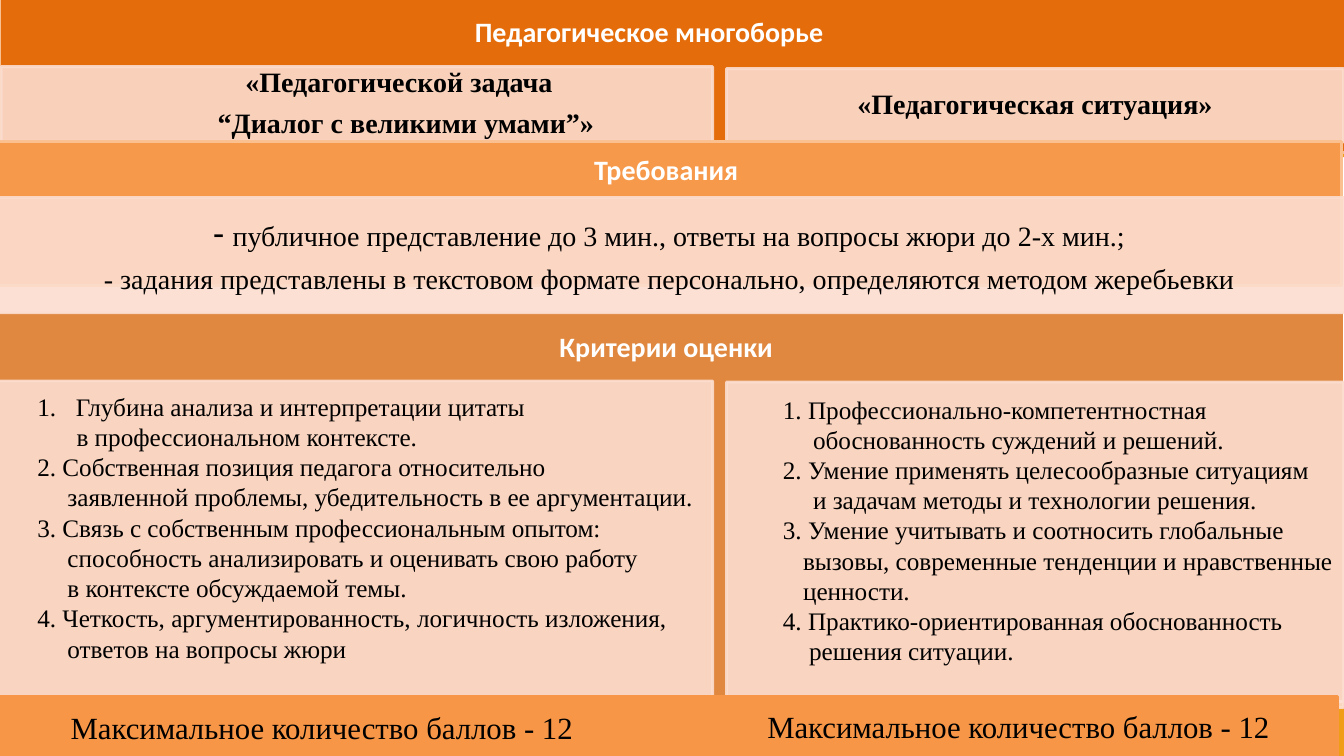
from pptx import Presentation
from pptx.dml.color import RGBColor
from pptx.enum.shapes import MSO_SHAPE
from pptx.enum.text import MSO_ANCHOR, PP_ALIGN
from pptx.oxml.ns import qn
from pptx.util import Cm, Pt
from lxml.etree import SubElement

# Positions are left, top, width, height in centimetres.
SLIDE = (33.87, 19.05)


class Theme:
    serif, sans = "Times New Roman", "Calibri"
    ink, white = "000000", "FFFFFF"
    top, top_line = "E46C0A", "FAC090"
    requirements, criteria, footer = "F7994B", "E08840", "F79646"
    panel, panel_alpha, corner = "FCDDCF", 90, "F09D18"
    body, heading, score, dash = 18, 20, 22, 26
    outline, line_spacing, gap_after = 2, 0.9, 8


CORNERS = [
    [(33.87, 0), (31.04, 0), (31.04, 0.61), (33.25, 0.61), (33.25, 3.96), (33.87, 3.96)],
    [(33.87, 15.09), (33.32, 15.09), (33.32, 18.39), (31.04, 18.39), (31.04, 19.05), (33.87, 19.05)],
]

# Each section: band position, fill, outline, then its panels.
# A panel: position, side inset, lines; a line: left indent, runs.
SECTIONS = [
    ((-0.15, 7.85, 34.04, 9.83), Theme.criteria, Theme.white, [
        ((-0.2, 9.6, 18.16, 8.1), 0, []),
        ((18.31, 9.63, 15.55, 8.2), 0, []),
    ]),
    ((0, -0.05, 33.9, 3.9), Theme.top, Theme.top_line, [
        ((0.03, 1.68, 17.93, 1.88), 0.41, [
            (2.12, [("«Педагогической задача", Theme.serif, Theme.heading, True)]),
            (2.47, [("“Диалог с великими умами”»", Theme.serif, Theme.heading, True)]),
        ]),
        ((18.31, 1.73, 15.55, 1.85), 0.41, [
            (0, [("«Педагогическая ситуация»", Theme.serif, Theme.heading, True)]),
        ]),
    ]),
    ((-0.05, 3.56, 33.86, 3.63), Theme.requirements, Theme.top_line, [
        ((-0.18, 4.98, 34.1, 2.9), 0.51, [
            (0, [("- ", Theme.sans, Theme.dash, False),
                 ("публичное представление до 3 мин., ответы на вопросы жюри до 2-х мин.;",
                  Theme.serif, Theme.heading, False)]),
            (0, [("- задания представлены в текстовом формате персонально, "
                  "определяются методом жеребьевки", Theme.serif, Theme.heading, False)]),
        ]),
    ]),
    ((-0.13, 17.55, 33.83, 1.63), Theme.footer, Theme.footer, []),
]

# Each line: left indent, first-line indent, automatic number, text.
CRITERIA = [
    ((0.69, 9.73, 17.68, 7.19), [
        (0.97, -0.97, True, "Глубина анализа и интерпретации цитаты"),
        (0, 0.99, False, "в профессиональном контексте."),
        (0, 0, False, "2. Собственная позиция педагога относительно"),
        (0, 0.76, False, "заявленной проблемы, убедительность в ее аргументации."),
        (0.76, -0.76, False, "3. Связь с собственным профессиональным опытом: "
                             "способность анализировать и оценивать свою работу"),
        (0.76, 0, False, "в контексте обсуждаемой темы."),
        (0.76, -0.76, False, "4. Четкость, аргументированность, логичность изложения, "
                             "ответов на вопросы жюри"),
    ]),
    ((19.48, 9.8, 17.91, 7.95), [
        (0, 0, False, "1. Профессионально-компетентностная"),
        (0, 0.76, False, "обоснованность суждений и решений."),
        (0, 0, False, "2. Умение применять целесообразные ситуациям"),
        (0, 0.76, False, "и задачам методы и технологии решения."),
        (0, 0, False, "3. Умение учитывать и соотносить глобальные"),
        (0, 0.51, False, "вызовы, современные тенденции и нравственные"),
        (0, 0.51, False, "ценности."),
        (0, 0, False, "4. Практико-ориентированная обоснованность"),
        (0, 0.66, False, "решения ситуации."),
    ]),
]

HEADINGS = [
    ((12.27, 8.18, 9.04, 1.12), "Критерии оценки"),
    ((14.4, 3.73, 4.78, 1.12), "Требования"),
    ((11.05, 0.23, 10.62, 1.12), "Педагогическое многоборье"),
]
MAX_SCORE = "Максимальное количество баллов - 12"
SCORES = [(1.47, 17.73, 13.28, 1.19), (18.72, 17.7, 13.89, 1.19)]


def cm(values):
    return [Cm(value) for value in values]


def add_run(paragraph, text, font, size, color=Theme.ink, bold=False):
    run = paragraph.add_run()
    run.text = text
    run.font.name, run.font.size, run.font.bold = font, Pt(size), bold
    run.font.color.rgb = RGBColor.from_string(color)


def indent(paragraph, left, first=0):
    properties = paragraph._p.get_or_add_pPr()
    properties.set("marL", str(Cm(left)))
    properties.set("indent", str(Cm(first)))
    return properties


def paragraphs(frame, lines):
    """Yield each line with a paragraph to hold it."""
    for number, line in enumerate(lines):
        yield (frame.add_paragraph() if number else frame.paragraphs[0]), line


def add_block(slide, position, fill, line):
    block = slide.shapes.add_shape(MSO_SHAPE.RECTANGLE, *cm(position))
    block.shadow.inherit = False
    block.fill.solid()
    block.fill.fore_color.rgb = RGBColor.from_string(fill)
    block.line.color.rgb = RGBColor.from_string(line)
    block.line.width = Pt(Theme.outline)
    return block


def add_panel(slide, position, inset, lines):
    panel = add_block(slide, position, Theme.panel, Theme.panel)
    for color in panel._element.spPr.iter(qn("a:srgbClr")):
        SubElement(color, qn("a:alpha")).set("val", str(Theme.panel_alpha * 1000))
    frame = panel.text_frame
    frame.word_wrap = True
    frame.vertical_anchor = MSO_ANCHOR.MIDDLE
    frame.margin_left = frame.margin_right = Cm(inset)
    frame.margin_top = frame.margin_bottom = Cm(0.08)
    for paragraph, (left, runs) in paragraphs(frame, lines):
        paragraph.alignment = PP_ALIGN.CENTER
        paragraph.line_spacing = Theme.line_spacing
        paragraph.space_after = Pt(Theme.gap_after)
        indent(paragraph, left)
        for text, font, size, bold in runs:
            add_run(paragraph, text, font, size, bold=bold)


def add_text_frame(slide, position):
    frame = slide.shapes.add_textbox(*cm(position)).text_frame
    frame.word_wrap = True
    return frame


def add_label(slide, position, *run):
    paragraph = add_text_frame(slide, position).paragraphs[0]
    paragraph.alignment = PP_ALIGN.CENTER
    add_run(paragraph, *run)


def add_criteria(slide, position, lines):
    for paragraph, (left, first, numbered, text) in paragraphs(add_text_frame(slide, position), lines):
        properties = indent(paragraph, left, first)
        if numbered:
            SubElement(properties, qn("a:buFont")).set("typeface", Theme.serif)
            SubElement(properties, qn("a:buAutoNum")).set("type", "arabicPeriod")
        add_run(paragraph, text, Theme.serif, Theme.body)


def add_corner(slide, points):
    start, *rest = [tuple(cm(point)) for point in points]
    builder = slide.shapes.build_freeform(*start)
    builder.add_line_segments(rest, close=True)
    corner = builder.convert_to_shape()
    corner.shadow.inherit = False
    corner.fill.solid()
    corner.fill.fore_color.rgb = RGBColor.from_string(Theme.corner)
    corner.line.fill.background()


def main():
    deck = Presentation()
    deck.slide_width, deck.slide_height = cm(SLIDE)
    slide = deck.slides.add_slide(deck.slide_layouts[6])
    for points in CORNERS:
        add_corner(slide, points)
    for position, fill, line, panels in SECTIONS:
        add_block(slide, position, fill, line)
        for panel in panels:
            add_panel(slide, *panel)
    for position, lines in CRITERIA:
        add_criteria(slide, position, lines)
    for position, heading in HEADINGS:
        add_label(slide, position, heading, Theme.sans, Theme.heading, Theme.white, True)
    for position in SCORES:
        add_label(slide, position, MAX_SCORE, Theme.serif, Theme.score)
    deck.save("out.pptx")


if __name__ == "__main__":
    main()
